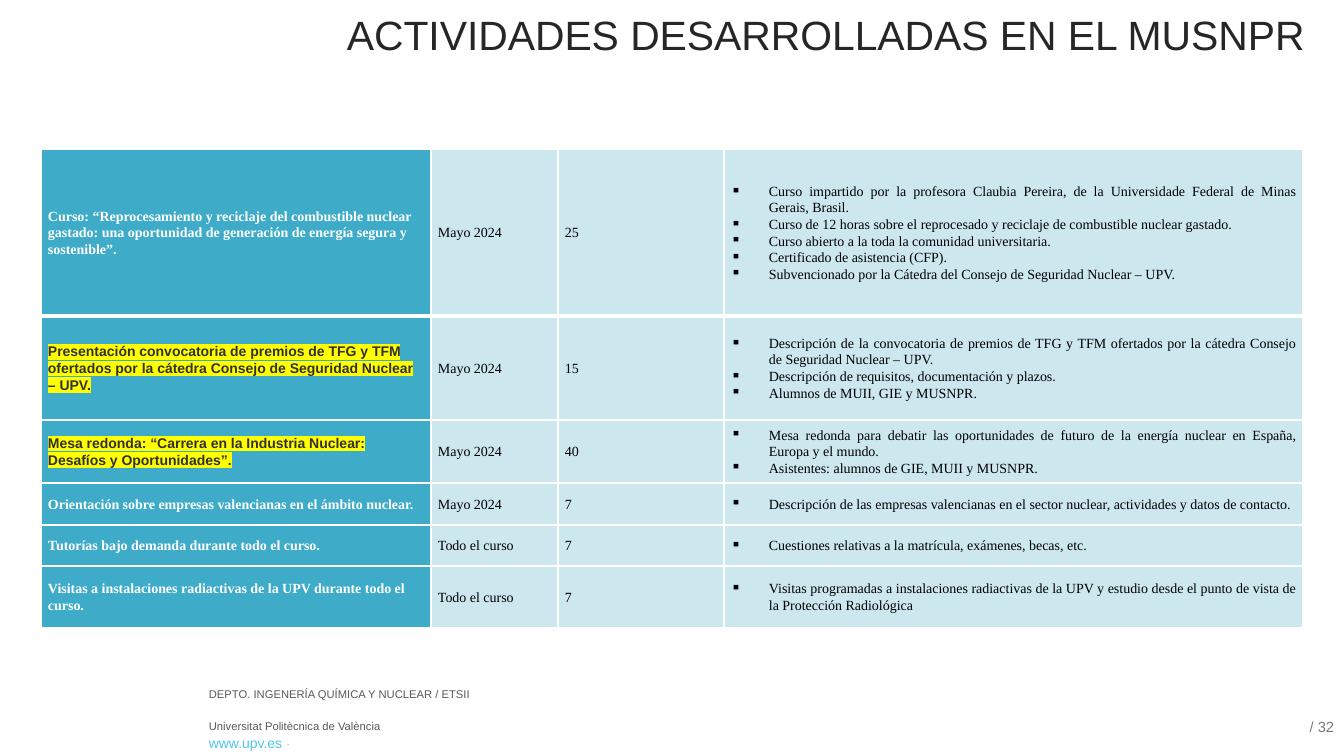
from dataclasses import dataclass

from lxml import etree
from pptx import Presentation
from pptx import util as u
from pptx.dml.color import RGBColor
from pptx.enum import text
from pptx.oxml import ns

SCALE = 914400 / 100.8  # EMU per px


def px(length):
    return u.Emu(round(length * SCALE))


@dataclass(frozen=True)
class Theme:
    sans: str = "Arial"
    serif: str = "Times New Roman"
    title: str = "262626"
    footer: str = "595959"
    link: str = "4EC7E7"
    dot: str = "B5B5B5"
    number: str = "797979"
    heading_fill: str = "3EABC8"
    body_fill: str = "CDE7EF"
    white: str = "FFFFFF"
    black: str = "000000"
    marked_text: str = "303030"
    marker: str = "FFFF00"
    title_size: float = 29.2
    table_size: float = 10
    footer_size: float = 8
    link_size: float = 10
    dot_size: float = 9
    number_size: float = 10.5


def add_child(parent, tag, **attributes):
    child = etree.SubElement(parent, ns.qn(tag))
    for name, value in attributes.items():
        child.set(name, str(value))
    return child


def write(para, words, *, size, color, font, bold=False, highlight=None,
          align=None, line=None, after=None, bullet=None, indent=38):
    """Append a run to a paragraph and format both."""
    if align is not None:
        para.alignment = align
    if line is not None:
        para.line_spacing = line
    if after is not None:
        para.space_after = u.Pt(after)
    if bullet:
        properties = para._p.get_or_add_pPr()
        properties.set("marL", str(px(indent)))
        properties.set("indent", str(-px(indent)))
        add_child(properties, "a:buChar", char=bullet)
    span = para.add_run()
    span.text = words
    span.font.size = u.Pt(size)
    span.font.bold = bold
    span.font.color.rgb = RGBColor.from_string(color)
    if highlight:
        mark = add_child(span._r.get_or_add_rPr(), "a:highlight")
        add_child(mark, "a:srgbClr", val=highlight)
    span.font.name = font


class SlideBuilder:
    def __init__(self, deck, theme):
        self.theme = theme
        self.page = deck.slides.add_slide(deck.slide_layouts[5])

    def title(self, words, left, top, width, height):
        box = self.page.shapes.title
        box.left, box.top, box.width, box.height = map(px, (left, top, width, height))
        frame = box.text_frame
        frame.auto_size = text.MSO_AUTO_SIZE.NONE
        frame.vertical_anchor = text.MSO_ANCHOR.MIDDLE
        write(frame.paragraphs[0], words, size=self.theme.title_size,
              color=self.theme.title, font=self.theme.sans,
              align=text.PP_ALIGN.RIGHT, line=0.8)

    def label(self, spans, left, top, width, height, align=text.PP_ALIGN.LEFT,
              anchor=text.MSO_ANCHOR.TOP):
        box = self.page.shapes.add_textbox(*map(px, (left, top, width, height)))
        frame = box.text_frame
        frame.word_wrap = True
        frame.vertical_anchor = anchor
        for words, size, color in spans:
            write(frame.paragraphs[0], words, size=size, color=color,
                  font=self.theme.sans, align=align)

    def borders(self, cell, widths):
        properties = cell._tc.get_or_add_tcPr()
        for side, width in widths.items():
            line = add_child(properties, f"a:ln{side}", w=u.Pt(width))
            fill = add_child(line, "a:solidFill")
            add_child(fill, "a:srgbClr", val=self.theme.white)

    def cell(self, cell, lines, fill, widths, bullet=None, **style):
        self.borders(cell, widths)
        cell.fill.solid()
        cell.fill.fore_color.rgb = RGBColor.from_string(fill)
        cell.vertical_anchor = text.MSO_ANCHOR.MIDDLE
        cell.margin_left = cell.margin_right = px(7)
        cell.margin_top = cell.margin_bottom = 0
        frame = cell.text_frame
        for index, words in enumerate(lines):
            para = frame.add_paragraph() if index else frame.paragraphs[0]
            write(para, words, size=self.theme.table_size, line=1.07,
                  after=8 if index == len(lines) - 1 else 0, bullet=bullet, **style)

    def activities(self, rows, left, top, widths, heights):
        theme = self.theme
        frame = self.page.shapes.add_table(
            len(rows), len(widths), *map(px, (left, top, sum(widths), sum(heights))))
        table = frame.table
        table.first_row = table.horz_banding = False
        for column, width in zip(table.columns, widths):
            column.width = px(width)
        for row, height in zip(table.rows, heights):
            row.height = px(height)

        plain = dict(color=theme.black, font=theme.serif)
        heading = dict(color=theme.white, font=theme.serif, bold=True)
        marked = dict(color=theme.marked_text, font=theme.sans, bold=True,
                      highlight=theme.marker)
        for index, (name, date, people, details, is_marked) in enumerate(rows):
            # A thick rule parts the first row from the rest
            edges = dict(L=1, R=1, T=3 if index == 1 else 1, B=3 if index == 0 else 1)
            cells = table.rows[index].cells
            self.cell(cells[0], [name], theme.heading_fill, edges,
                      **(marked if is_marked else heading))
            self.cell(cells[1], [date], theme.body_fill, edges, **plain)
            self.cell(cells[2], [people], theme.body_fill, edges, **plain)
            self.cell(cells[3], details, theme.body_fill, edges, bullet="▪",
                      align=text.PP_ALIGN.JUSTIFY, **plain)


# Activity, date, attendees, details, highlighted
ACTIVITIES = [
    ("Curso: “Reprocesamiento y reciclaje del combustible nuclear gastado: una "
     "oportunidad de generación de energía segura y sostenible”.", "Mayo 2024", "25",
     ["Curso impartido por la profesora Claubia Pereira, de la Universidade Federal "
      "de Minas Gerais, Brasil.",
      "Curso de 12 horas sobre el reprocesado y reciclaje de combustible nuclear gastado.",
      "Curso abierto a la toda la comunidad universitaria.",
      "Certificado de asistencia (CFP).",
      "Subvencionado por la Cátedra del Consejo de Seguridad Nuclear – UPV."], False),
    ("Presentación convocatoria de premios de TFG y TFM ofertados por la cátedra "
     "Consejo de Seguridad Nuclear – UPV.", "Mayo 2024", "15",
     ["Descripción de la convocatoria de premios de TFG y TFM ofertados por la "
      "cátedra Consejo de Seguridad Nuclear – UPV.",
      "Descripción de requisitos, documentación y plazos.",
      "Alumnos de MUII, GIE y MUSNPR."], True),
    ("Mesa redonda: “Carrera en la Industria Nuclear: Desafíos y Oportunidades”.",
     "Mayo 2024", "40",
     ["Mesa redonda para debatir las oportunidades de futuro de la energía nuclear "
      "en España, Europa y el mundo.",
      "Asistentes: alumnos de GIE, MUII y MUSNPR."], True),
    ("Orientación sobre empresas valencianas en el ámbito nuclear.", "Mayo 2024", "7",
     ["Descripción de las empresas valencianas en el sector nuclear, actividades y "
      "datos de contacto."], False),
    ("Tutorías bajo demanda durante todo el curso.", "Todo el curso", "7",
     ["Cuestiones relativas a la matrícula, exámenes, becas, etc."], False),
    ("Visitas a instalaciones radiactivas de la UPV durante todo el curso.",
     "Todo el curso", "7",
     ["Visitas programadas a instalaciones radiactivas de la UPV y estudio desde el "
      "punto de vista de la Protección Radiológica"], False),
]


def main():
    deck = Presentation()
    deck.slide_width, deck.slide_height = px(1344), px(756)
    theme = Theme()
    slide = SlideBuilder(deck, theme)

    # Footer
    slide.label([("Universitat Politècnica de València", theme.footer_size, theme.footer)],
                199, 714, 291, 24)
    slide.label([("DEPTO. INGENERÍA QUÍMICA Y NUCLEAR / ETSII", theme.footer_size,
                  theme.footer)], 199, 682, 362, 23)
    slide.label([("www.upv.es ", theme.link_size, theme.link),
                 ("·", theme.dot_size, theme.dot)], 199, 730, 319, 28)
    slide.label([("/ 32", theme.number_size, theme.number)], 1191, 713, 153, 28,
                align=text.PP_ALIGN.RIGHT, anchor=text.MSO_ANCHOR.MIDDLE)

    # Title and table
    slide.title("ACTIVIDADES DESARROLLADAS EN EL MUSNPR", 67, 13, 1248, 52)
    slide.activities(ACTIVITIES, 41, 149, widths=[390, 127, 166, 579],
                     heights=[167, 104, 63, 42, 41, 62])
    deck.save("out.pptx")


if __name__ == "__main__":
    main()
